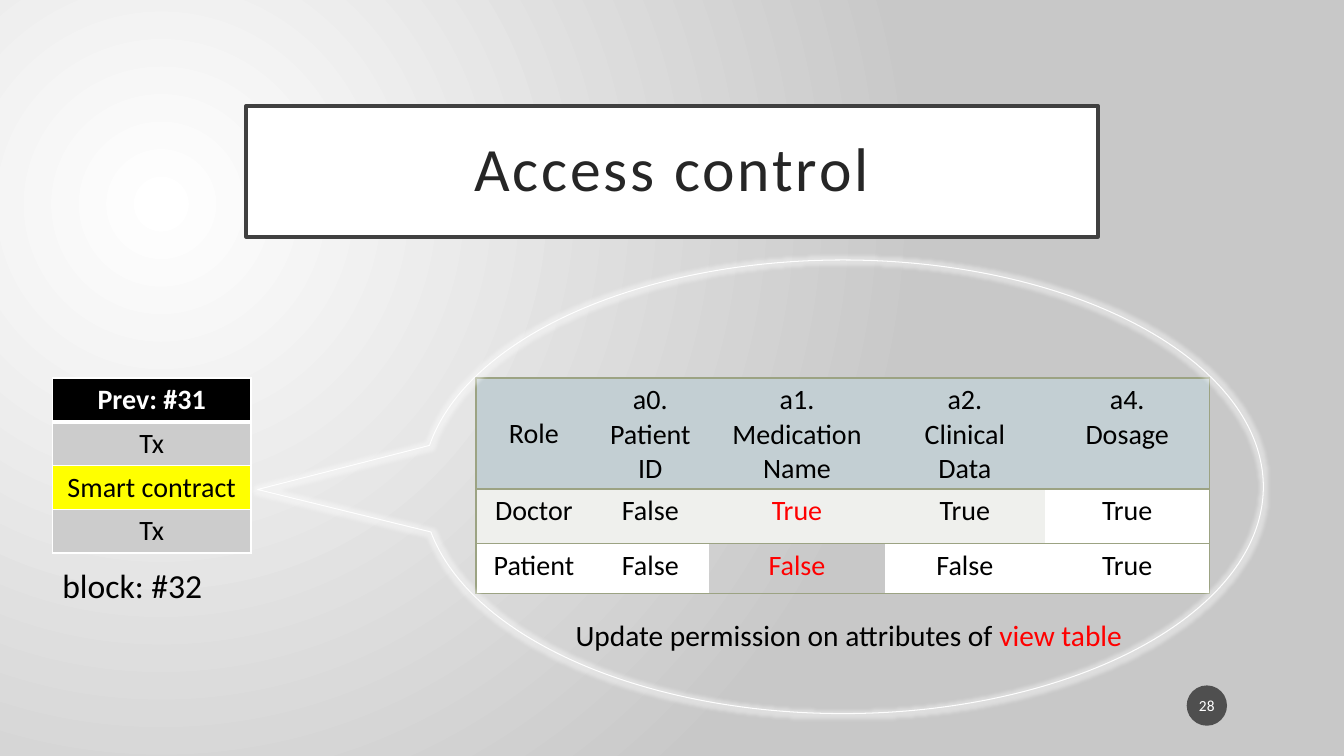
from lxml.etree import SubElement
from pptx import Presentation
from pptx.dml.color import RGBColor
from pptx.enum.shapes import MSO_SHAPE
from pptx.enum.text import MSO_ANCHOR, MSO_AUTO_SIZE, PP_ALIGN
from pptx.oxml.ns import qn
from pptx.util import Pt

PX = 9144  # 100 px to the inch
FONT = "Calibri"
BLACK, WHITE, RED = "000000", "FFFFFF", "FF0000"
RULE, HEADER, BAND = "9CA383", "C3CFD3", "EFF0ED"
GREY, YELLOW = "CCCCCC", "FFFF00"


def rgb(value):
    return RGBColor.from_string(value)


def add_color(parent, value, opacity=100):
    color = SubElement(parent, qn("a:srgbClr"), val=value)
    if opacity < 100:
        SubElement(color, qn("a:alpha"), val=str(opacity * 1000))


def set_opacity(fill_parent, opacity):
    color = fill_parent.find(qn("a:solidFill")).find(qn("a:srgbClr"))
    SubElement(color, qn("a:alpha"), val=str(opacity * 1000))


def write(frame, text, size=20, color=BLACK, bold=False, align=PP_ALIGN.CENTER,
          line_spacing=None, tracking=0, tail="", tail_color=RED):
    """Write one paragraph per line; tail is an extra run in its own colour."""
    for index, line in enumerate(text.split("\n")):
        paragraph = frame.add_paragraph() if index else frame.paragraphs[0]
        paragraph.alignment = align
        if line_spacing:
            paragraph.line_spacing = line_spacing
        for words, run_color in ((line, color), (tail, tail_color)):
            if not words:
                continue
            run = paragraph.add_run()
            run.text = words
            run.font.name, run.font.size, run.font.bold = FONT, Pt(size), bold
            run.font.color.rgb = rgb(run_color)
            if tracking:
                run._r.get_or_add_rPr().set("spc", str(tracking * 100))


class SlideBuilder:
    def __init__(self, deck):
        self.slide = deck.slides.add_slide(deck.slide_layouts[5])
        self.shapes = self.slide.shapes

    def background(self, inner, outer, focus):
        fill = self.slide.background.fill
        fill.gradient()
        for stop, position, color in zip(fill.gradient_stops, (0, 1), (inner, outer)):
            stop.position = position
            stop.color.rgb = rgb(color)
        gradient = self.slide.element.find(".//" + qn("a:gradFill"))
        gradient.remove(gradient.find(qn("a:lin")))
        circle = SubElement(gradient, qn("a:path"), path="circle")
        edges = {side: str(percent * 1000) for side, percent in zip("ltrb", focus)}
        SubElement(circle, qn("a:fillToRect"), **edges)

    def title(self, text, box):
        title = self.shapes.title
        title.left, title.top, title.width, title.height = (n * PX for n in box)
        title.fill.solid()
        title.fill.fore_color.rgb = rgb(WHITE)
        title.line.color.rgb = rgb("404040")
        title.line.width = Pt(2.5)
        frame = title.text_frame
        frame.auto_size = MSO_AUTO_SIZE.NONE
        frame.word_wrap = True
        frame.vertical_anchor = MSO_ANCHOR.MIDDLE
        self.inset(frame, 20, 20)
        write(frame, text, size=44, color="262626", line_spacing=0.9, tracking=2)

    def inset(self, frame, across, down):
        frame.margin_left = frame.margin_right = across * PX
        frame.margin_top = frame.margin_bottom = down * PX

    def preset(self, kind, box):
        shape = self.shapes.add_shape(kind, *(n * PX for n in box))
        shape.shadow.inherit = False
        return shape

    def badge(self, text, box):
        badge = self.preset(MSO_SHAPE.OVAL, box)
        badge.fill.solid()
        badge.fill.fore_color.rgb = rgb("1D1D1D")
        set_opacity(badge.element.spPr, 70)
        badge.line.fill.background()
        badge.text_frame.vertical_anchor = MSO_ANCHOR.MIDDLE
        self.inset(badge.text_frame, 2, 5)
        write(badge.text_frame, text, size=11, color=WHITE)

    def callout(self, box, adjustments):
        callout = self.preset(MSO_SHAPE.OVAL_CALLOUT, box)
        callout.rotation = 90
        for index, value in enumerate(adjustments):
            callout.adjustments[index] = value
        callout.fill.background()
        callout.line.color.rgb = rgb(WHITE)
        callout.line.width = Pt(0)
        properties = callout.element.spPr
        set_opacity(properties.find(qn("a:ln")), 97)
        glow = SubElement(properties.find(qn("a:effectLst")), qn("a:glow"), rad=str(Pt(5)))
        add_color(glow, WHITE, 40)

    def label(self, text, box, **text_format):
        frame = self.shapes.add_textbox(*(n * PX for n in box)).text_frame
        frame.word_wrap = True
        write(frame, text, align=PP_ALIGN.LEFT, **text_format)

    def table(self, origin, widths, heights):
        size = sum(widths), sum(heights)
        table = self.shapes.add_table(len(heights), len(widths),
                                      *(n * PX for n in origin + size)).table
        table.first_row = table.horz_banding = False
        for column, width in zip(table.columns, widths):
            column.width = width * PX
        for row, height in zip(table.rows, heights):
            row.height = height * PX
        return table

    def cell(self, cell, text, fill, borders, **text_format):
        """Borders map each of L, R, T, B to (colour, points); others are clear."""
        properties = cell._tc.get_or_add_tcPr()
        for side in "LRTB":
            color, points = borders.get(side, (None, 0))
            line = SubElement(properties, qn("a:ln" + side), w=str(Pt(points)))
            if color:
                add_color(SubElement(line, qn("a:solidFill")), color)
            else:
                SubElement(line, qn("a:noFill"))
        if fill:
            cell.fill.solid()
            cell.fill.fore_color.rgb = rgb(fill)
        else:
            cell.fill.background()
        write(cell.text_frame, text, **text_format)


def main():
    deck = Presentation()
    deck.slide_width, deck.slide_height = 1333 * PX, 750 * PX
    page = SlideBuilder(deck)
    page.background(WHITE, "C8C8C8", focus=(50, 55, 125, 100))
    page.title("Access control", (244, 105, 845, 130))
    page.badge("28", (1177, 680, 40, 40))
    page.label("block: #32", (52, 556, 201, 50), size=24)

    # Permissions per role
    permissions = [
        ("Role", "a0.\nPatient ID", "a1.\nMedication Name", "a2.\nClinical Data", "a4.\nDosage"),
        ("Doctor", "False", "True", "True", "True"),
        ("Patient", "False", "False", "False", "True"),
    ]
    permission_fills = [
        [HEADER] * 5,
        [BAND] * 4 + [WHITE],
        [WHITE, WHITE, None, WHITE, WHITE],
    ]
    view_table = page.table((472, 375), (115, 116, 175, 158, 164), (110, 54, 50))
    for r, (texts, fills) in enumerate(zip(permissions, permission_fills)):
        for c, (text, fill) in enumerate(zip(texts, fills)):
            sides = "TB" + {0: "L", 4: "R"}.get(c, "")
            page.cell(view_table.cell(r, c), text, fill,
                      {side: (RULE, 1) for side in sides},
                      color=RED if r and c == 2 else BLACK)
    view_table.cell(0, 0).vertical_anchor = MSO_ANCHOR.MIDDLE

    # Block contents
    block_rows = [("Prev: #31", BLACK), ("Tx", GREY), ("Smart contract", YELLOW), ("Tx", GREY)]
    block = page.table((52, 375), (197,), (43,) * len(block_rows))
    for r, (text, fill) in enumerate(block_rows):
        borders = {side: (WHITE, 1) for side in "LRTB"}
        if r < 2:
            borders["T" if r else "B"] = (WHITE, 3)
        page.cell(block.cell(r, 0), text, fill, borders,
                  color=BLACK if r else WHITE, bold=r == 0)

    # Callout from the smart contract to its view table
    page.callout((611, 66, 450, 834), (0.006, 0.696))
    page.label("Update permission on attributes of ", (561, 607, 575, 45),
               size=21, tail="view table")
    deck.save("out.pptx")


if __name__ == "__main__":
    main()
